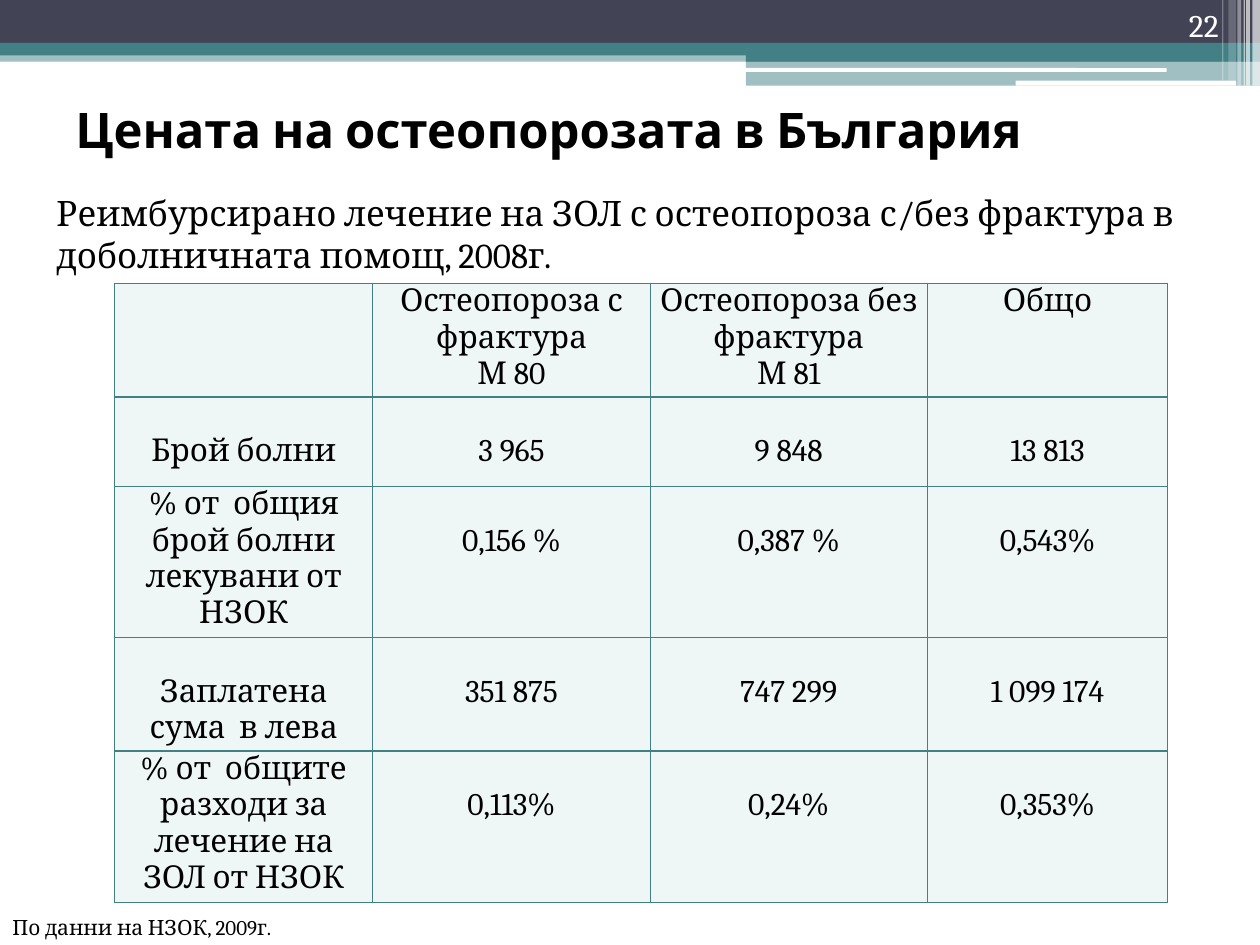
"""Builds a slide with a table of osteoporosis costs on a 100 by 75 grid."""
from lxml.etree import SubElement as Sub
from pptx import Presentation
from pptx.dml.color import RGBColor as Rgb
from pptx.enum.shapes import MSO_SHAPE as Kind
from pptx.enum.text import MSO_ANCHOR as Anchor, PP_ALIGN as Align
from pptx.oxml.ns import qn
from pptx.util import Inches, Pt

COLS, ROWS = 100, 75
TEAL, NAVY, WHITE, BLACK, PALE = "438086", "424456", "FFFFFF", "000000", "EEF6F6"
SERIF, SANS = "Cambria", "Cabin"

BANDS = [
    (0, 4, 100, 0.9, TEAL, 50),
    (0, 0, 100, 3.4, NAVY, 100),
    (0, 3.4, 100, 1, TEAL, 100),
    (59.2, 3.9, 40.8, 1, TEAL, 100),
    (59.2, 4.8, 40.8, 2, TEAL, 50),
]
BARS = [(59.1, 5.4, 33.5, 0.3), (80.6, 6.4, 17.5, 0.4)]
STRIPES = [
    (99.4, 0.6, 6.8, 65), (98.9, 0.3, 6.8, 65), (98.7, 0.1, 6.8, 60),
    (98.2, 0.3, 6.8, 40), (97.5, 0.6, 6.4, 20), (97, 0.1, 6.4, 30),
]
WIDTHS = [20.5, 22, 22, 19.1]
HEIGHTS = [9, 7.1, 12, 9, 12]
GAP = 2.9
HEAD = ["", "Остеопороза с фрактура\nМ 80", "Остеопороза без фрактура\nМ 81", "Общо"]
BODY = [
    ["Брой болни", "3 965", "9 848", "13 813"],
    ["% от  общия брой болни\nлекувани от НЗОК", "0,156 %", "0,387 %", "0,543%"],
    ["Заплатена сума  в лева", "351 875", "747 299", "1 099 174"],
    ["% от  общите разходи за лечение на ЗОЛ от НЗОК", "0,113%", "0,24%", "0,353%"],
]
HIGH = {(2, 0), (4, 0)}


def step(n):
    """Turn grid steps into a length."""
    return Inches(n / 10)


def hue(code):
    """Turn a hex string into a colour."""
    return Rgb.from_string(code)


def block(slide, x, y, w, h, code, alpha=100, kind=Kind.RECTANGLE):
    """Add a plain filled shape, opaque by alpha percent."""
    shape = slide.shapes.add_shape(kind, *map(step, (x, y, w, h)))
    shape.shadow.inherit = False
    shape.line.fill.background()
    shape.fill.solid()
    shape.fill.fore_color.rgb = hue(code)
    if alpha < 100:
        tone = shape.fill._xPr.find(".//" + qn("a:srgbClr"))
        Sub(tone, qn("a:alpha"), val=str(alpha * 1000))


def write(frame, text, size, font=SERIF, code=BLACK, bold=False, align=Align.LEFT):
    """Fill a text frame with one paragraph for each line."""
    for i, line in enumerate(text.split("\n")):
        para = frame.add_paragraph() if i else frame.paragraphs[0]
        para.alignment = align
        run = para.add_run()
        run.text = line
        run.font.name, run.font.size, run.font.bold = font, Pt(size), bold
        run.font.color.rgb = hue(code)


def label(slide, x, y, w, h, text, size, anchor=Anchor.TOP, **style):
    """Add a wrapped text box."""
    frame = slide.shapes.add_textbox(*map(step, (x, y, w, h))).text_frame
    frame.word_wrap = True
    frame.vertical_anchor = anchor
    write(frame, text, size, **style)


def edge(cell):
    """Draw thin teal lines on all sides of a cell."""
    props = cell._tc.get_or_add_tcPr()
    for side in "LRTB":
        line = Sub(props, qn("a:ln" + side), w=str(Pt(0.75)))
        Sub(Sub(line, qn("a:solidFill")), qn("a:srgbClr"), val=TEAL)


def costs(slide, x, y):
    """Add the table of patients and costs."""
    data = [HEAD, *BODY]
    size = map(step, (x, y, sum(WIDTHS), sum(HEIGHTS)))
    table = slide.shapes.add_table(len(data), len(HEAD), *size).table
    table.first_row = table.horz_banding = False
    for col, w in zip(table.columns, WIDTHS):
        col.width = step(w)
    for r, (row, h) in enumerate(zip(data, HEIGHTS)):
        table.rows[r].height = step(h)
        for c, text in enumerate(row):
            cell = table.cell(r, c)
            cell.margin_left = cell.margin_right = step(0.7)
            cell.margin_top = step(GAP if r and (r, c) not in HIGH else 0)
            cell.margin_bottom = 0
            edge(cell)
            cell.fill.solid()
            cell.fill.fore_color.rgb = hue(PALE)
            if text:
                write(cell.text_frame, text, 18, align=Align.CENTER)


def main():
    """Build and save the slide."""
    deck = Presentation()
    deck.slide_width, deck.slide_height = step(COLS), step(ROWS)
    slide = deck.slides.add_slide(deck.slide_layouts[6])
    for band in BANDS:
        block(slide, *band)
    for bar in BARS:
        block(slide, *bar, WHITE, kind=Kind.ROUNDED_RECTANGLE)
    for x, w, h, alpha in STRIPES:
        block(slide, x, 0, w, h, WHITE, alpha)
    label(slide, 5, 4.4, 90, 11.7, "Цената на остеопорозата в България", 28,
          Anchor.MIDDLE, font=SANS, bold=True)
    label(slide, 89.4, 0, 8.3, 4, "22", 18, Anchor.BOTTOM, code=WHITE, align=Align.RIGHT)
    label(slide, 3.5, 14.7, 93.7, 7.7, "Реимбурсирано лечение на ЗОЛ с остеопороза "
          "с/без фрактура в доболничната помощ, 2008г.", 20)
    costs(slide, 9.1, 22.5)
    label(slide, 0, 72.1, 53.9, 3, "По данни на НЗОК, 2009г.", 12)
    deck.save("out.pptx")


if __name__ == "__main__":
    main()
